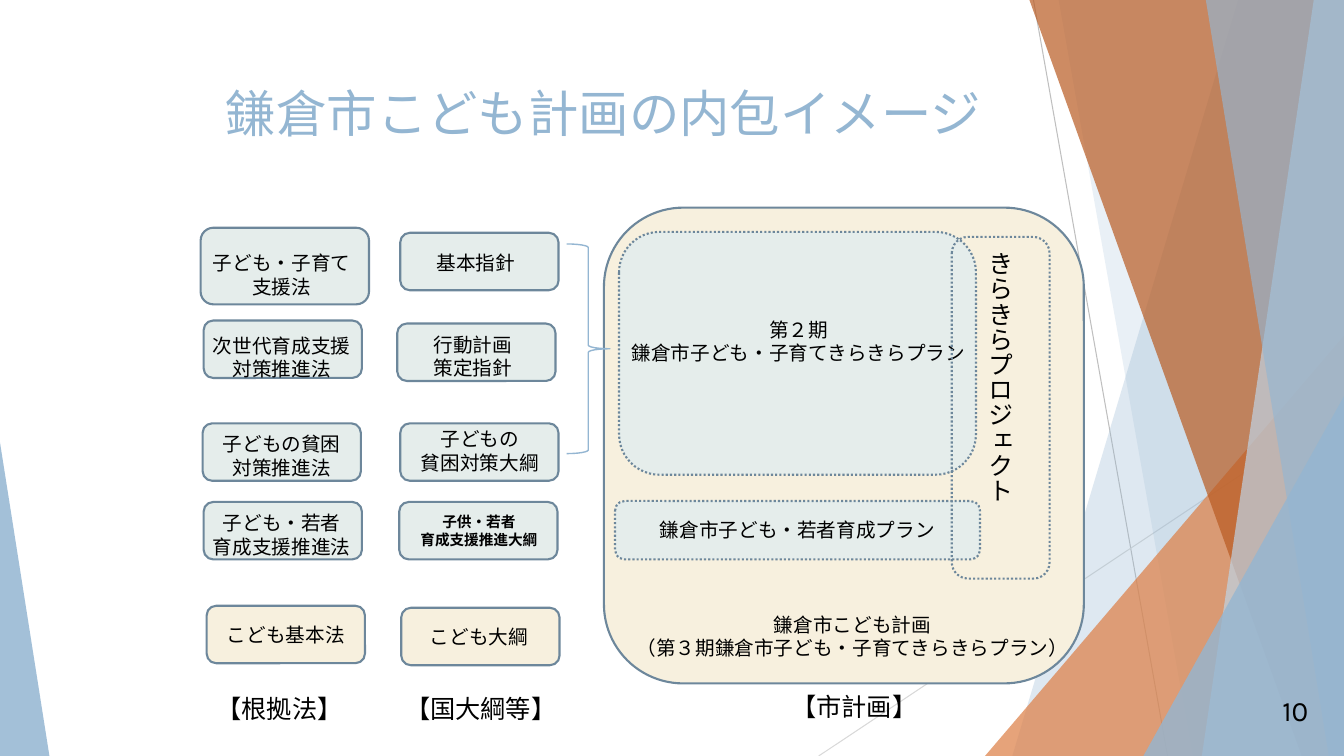
import pptx
import pptx.util
import pptx.dml.color
import pptx.enum.dml
import pptx.enum.shapes
import pptx.enum.text
import pptx.oxml.ns
import lxml.etree

Inches = pptx.util.Inches
RGBColor = pptx.dml.color.RGBColor
SHAPE = pptx.enum.shapes.MSO_SHAPE
ALIGN = pptx.enum.text.PP_ALIGN
ANCHOR = pptx.enum.text.MSO_ANCHOR
qn = pptx.oxml.ns.qn

BLACK = RGBColor(0x00, 0x00, 0x00)
BLUE = RGBColor(0x94, 0xB6, 0xD2)
PALE_BLUE = RGBColor(0xBF, 0xD3, 0xE4)
ORANGE = RGBColor(0xDD, 0x80, 0x47)
RUST = RGBColor(0xB9, 0x5B, 0x22)
GREY = RGBColor(0xBF, 0xBF, 0xBF)
LIGHT_GREY = RGBColor(0xD9, 0xD9, 0xD9)
CREAM = RGBColor(0xF7, 0xF0, 0xDE)
MINT = RGBColor(0xE5, 0xED, 0xEB)
SLATE = RGBColor(0x6D, 0x87, 0x9B)

FONT = "Karla"
WIDTH, HEIGHT = 13.33, 7.5
NODE_W, NODE_H = 1.57, 0.57


def write(tf, text, size=14, color=BLACK, align=ALIGN.CENTER, bold=None):
    tf.word_wrap = True
    tf.text = text
    for p in tf.paragraphs:
        p.alignment = align
        for r in p.runs:
            r.font.name = FONT
            r.font.size = pptx.util.Pt(size)
            r.font.color.rgb = color
            r.font.bold = bold


def add_label(s, text, x, y, w, h, **style):
    sp = s.shapes.add_textbox(Inches(x), Inches(y), Inches(w), Inches(h))
    write(sp.text_frame, text, **style)


def add_outlined(s, x, y, w, h, fill=None, dotted=False,
                 kind=SHAPE.ROUNDED_RECTANGLE, line=SLATE, weight=1.5):
    sp = s.shapes.add_shape(kind, Inches(x), Inches(y), Inches(w), Inches(h))
    sp.shadow.inherit = False
    if fill is None:
        sp.fill.background()
    else:
        sp.fill.solid()
        sp.fill.fore_color.rgb = fill
    sp.line.color.rgb = line
    sp.line.width = pptx.util.Pt(weight)
    if dotted:
        sp.line.dash_style = pptx.enum.dml.MSO_LINE.ROUND_DOT
    return sp


def paint_facet(sp, color, opacity):
    sp.shadow.inherit = False
    sp.line.fill.background()
    sp.fill.solid()
    sp.fill.fore_color.rgb = color
    clr = sp.fill._xPr.find(qn("a:solidFill"))[0]
    lxml.etree.SubElement(clr, qn("a:alpha")).set("val", str(opacity * 1000))


def add_facets(s):
    # Thin crossing lines
    for x1, y1, x2, y2, color in ((10.25, 0, 11.58, HEIGHT, GREY),
                                  (WIDTH, 4.03, 8.12, HEIGHT, LIGHT_GREY)):
        c = s.shapes.add_connector(pptx.enum.shapes.MSO_CONNECTOR.STRAIGHT,
                                   Inches(x1), Inches(y1), Inches(x2), Inches(y2))
        c.line.color.rgb = color
        c.line.width = pptx.util.Pt(0.75)
        lxml.etree.SubElement(c._element.spPr, qn("a:effectLst"))

    def band(top, bottom, color, opacity):
        # Slanted left edge, the rest reaches the slide's right edge
        fb = s.shapes.build_freeform(Inches(top), 0, scale=1.0)
        fb.add_line_segments([(Inches(WIDTH), 0), (Inches(WIDTH), Inches(HEIGHT)),
                              (Inches(bottom), Inches(HEIGHT))], close=True)
        paint_facet(fb.convert_to_shape(), color, opacity)

    def corner(x, y, w, peak, color, opacity):
        sp = s.shapes.add_shape(SHAPE.ISOSCELES_TRIANGLE, Inches(x), Inches(y),
                                Inches(w), Inches(HEIGHT - y))
        sp.adjustments[0] = peak
        paint_facet(sp, color, opacity)

    band(12.28, 10.04, BLUE, 30)
    band(10.5, 11.83, BLUE, 20)
    corner(9.77, 3.33, 3.56, 1, ORANGE, 72)
    band(10.21, 12.91, RUST, 70)
    band(13.03, 11.92, PALE_BLUE, 70)
    band(11.96, 13.18, BLUE, 65)
    corner(11.34, 3.93, 1.99, 1, BLUE, 80)
    corner(0, 4.39, 0.49, 0, BLUE, 85)


def add_title(s, x, y, w, h):
    sp = s.shapes.title
    sp.left, sp.top, sp.width, sp.height = map(Inches, (x, y, w, h))
    tf = sp.text_frame
    write(tf, "鎌倉市こども計画の内包イメージ", size=36, color=BLUE, align=ALIGN.LEFT)
    tf.auto_size = pptx.enum.text.MSO_AUTO_SIZE.NONE
    tf.vertical_anchor = ANCHOR.MIDDLE


def add_column(s, x, y, nodes, label_w, heading, heading_x, heading_w):
    # Each node: text, dx, dy, width, height, label dx, label dy
    for i, (text, dx, dy, w, h, label_dx, label_dy) in enumerate(nodes):
        last = i == len(nodes) - 1
        add_outlined(s, x + dx, y + dy, w, h, CREAM if last else MINT)
        small = text.startswith("子供")
        lines = text.count("\n") + 1
        add_label(s, text, x + label_dx, y + label_dy, label_w,
                  0.45 if small else (0.34, 0.57)[lines - 1],
                  size=10.5 if small else 14, bold=small or None)
    add_label(s, heading, x + heading_x, y + 4.57, heading_w, 0.4,
              size=18, align=ALIGN.LEFT)


def add_laws(s, x, y):
    add_column(s, x, y, [
        ("子ども・子育て\n支援法", 0, 0, 1.67, 0.76, 0.02, 0.18),
        ("次世代育成支援\n対策推進法", 0.03, 0.92, NODE_W, NODE_H, 0.02, 1),
        ("子どもの貧困\n対策推進法", 0.02, 1.94, NODE_W, NODE_H, 0.02, 1.98),
        ("子ども・若者\n育成支援推進法", 0.03, 2.72, NODE_W, NODE_H, 0.02, 2.76),
        ("こども基本法", 0.06, 3.75, NODE_W, NODE_H, 0.06, 3.87),
    ], NODE_W, "【根拠法】", 0.06, NODE_W)


def add_guidelines(s, x, y):
    add_column(s, x, y, [
        ("基本指針", 0.03, 0.05, NODE_W, NODE_H, 0.07, 0.18),
        ("行動計画\n策定指針", 0, 0.95, NODE_W, NODE_H, 0.04, 0.99),
        ("子どもの\n貧困対策大綱", 0.03, 1.94, NODE_W, NODE_H, 0.11, 1.93),
        ("子供・若者\n育成支援推進大綱", 0.02, 2.72, NODE_W, NODE_H, 0.1, 2.78),
        ("こども大綱", 0.04, 3.77, NODE_W, NODE_H, 0.1, 3.89),
    ], 1.42, "【国大綱等】", -0.02, 1.72)


def add_city_plan(s, x, y, w, h):
    # Overall plan
    add_outlined(s, x, y, w, h, CREAM)
    add_label(s, "鎌倉市こども計画\n（第３期鎌倉市子ども・子育てきらきらプラン）",
              x + 0.17, y + 3.97, w - 0.17, 0.57)
    # Youth plan
    add_outlined(s, x + 0.11, y + 2.91, 3.62, 0.58, MINT, dotted=True)
    add_label(s, "鎌倉市子ども・若者育成プラン", x + 0.39, y + 3.03, 3.06, 0.34)
    # Second-term plan
    add_outlined(s, x + 0.15, y + 0.24, 3.54, 2.41, MINT, dotted=True)
    add_label(s, "第２期\n鎌倉市子ども・子育てきらきらプラン",
              x + 0.11, y + 1.04, 3.64, 0.57)
    # Project spanning both plans, in vertical writing
    sp = add_outlined(s, x + 3.45, y + 0.29, 0.97, 3.39, dotted=True)
    tf = sp.text_frame
    write(tf, "きらきらプロジェクト", size=18, align=ALIGN.LEFT)
    tf.vertical_anchor = ANCHOR.MIDDLE
    tf._txBody.bodyPr.set("vert", "eaVert")
    add_label(s, "【市計画】", x + 1.76, y + 4.75, NODE_W, 0.4,
              size=18, align=ALIGN.LEFT)


def main():
    prs = pptx.Presentation()
    prs.slide_width, prs.slide_height = Inches(WIDTH), Inches(HEIGHT)
    s = prs.slides.add_slide(prs.slide_layouts[5])
    add_facets(s)
    add_title(s, 2.14, 0.72, 8.04, 0.78)
    add_laws(s, 1.99, 2.26)
    add_guidelines(s, 3.94, 2.26)
    add_city_plan(s, 5.99, 2.06, 4.76, 4.72)
    # Brace from the guidelines to the second-term plan
    add_outlined(s, 5.62, 2.42, 0.43, 2.08, kind=SHAPE.RIGHT_BRACE,
                 line=BLUE, weight=1)
    # Page number
    add_label(s, "10", 12.62, 6.83, 0.49, 0.44, size=20, align=ALIGN.LEFT)
    prs.save("out.pptx")


if __name__ == "__main__":
    main()
